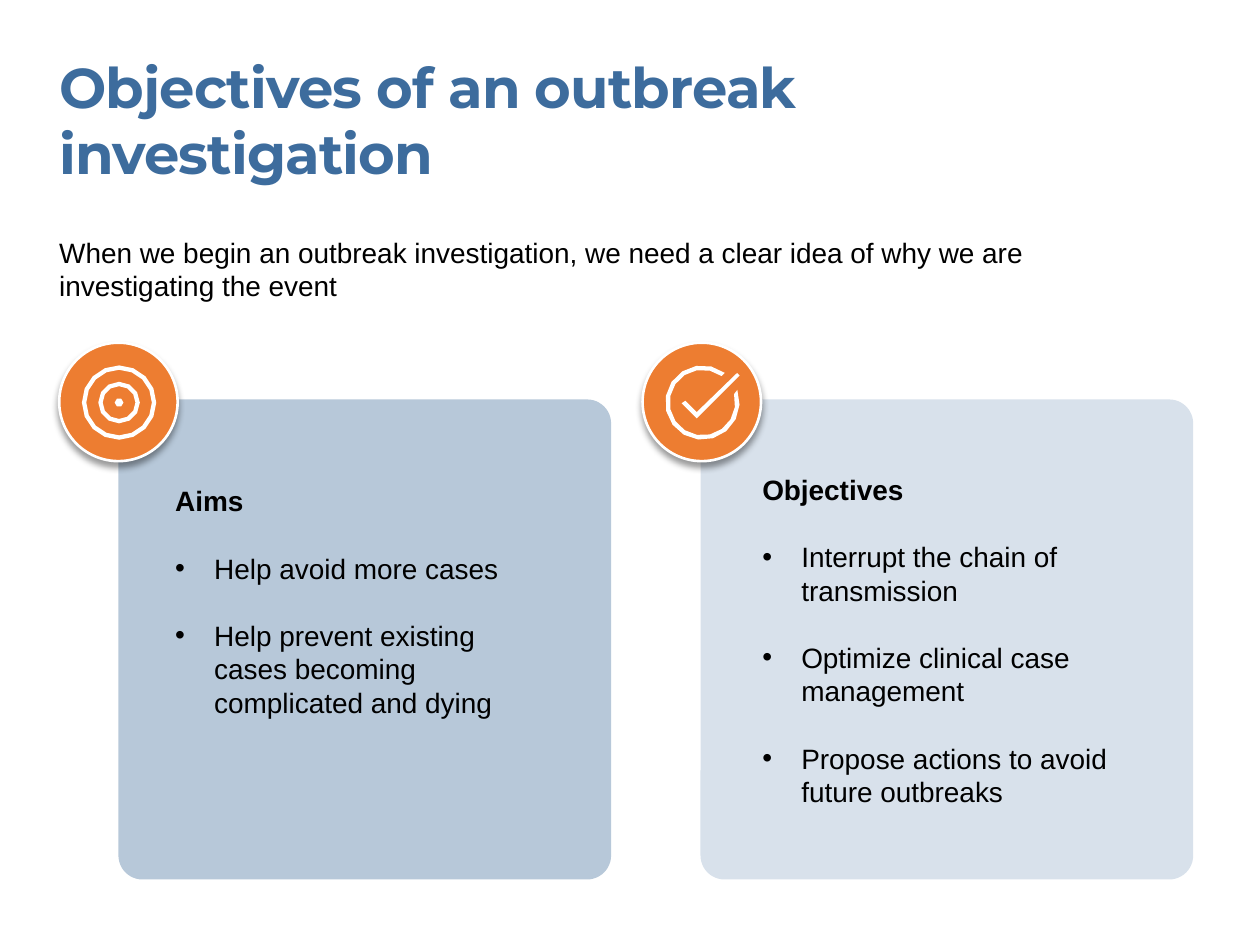
from math import cos, radians, sin

from lxml.etree import SubElement
from pptx import Presentation
from pptx.dml.color import RGBColor
from pptx.enum.shapes import MSO_SHAPE as Shape
from pptx.enum.text import MSO_AUTO_SIZE as AutoSize
from pptx.oxml.ns import qn
from pptx.util import Inches, Pt

COLORS = {"blue": "3D6C9D", "aims": "B7C8D9", "orange": "ED7D31",
          "white": "FFFFFF", "black": "000000"}
BODY = {"name": "Arial", "size": Pt(16), "bold": False}
HEADING = {**BODY, "bold": True}
TITLE = {"name": "Montserrat", "size": Pt(32), "bold": True}
LIST_SPACING = 1.2
HEADER_SPACING = 1.19
BADGE_SIZE = 0.94
BADGE_TOP = 2.72
ICON_INSET = 0.18
ICON_SIZE = 0.59
CARD_TOP = 3.17


def rgb(color):
    return RGBColor.from_string(COLORS[color])


def add_element(parent, tag, **values):
    return SubElement(parent, qn(tag), {key: str(value) for key, value in values.items()})


def paint(shape, color):
    shape.shadow.inherit = False
    shape.fill.solid()
    shape.fill.fore_color.rgb = rgb(color)
    shape.line.fill.background()


def add_box(page, left, top, width, height):
    box = page.shapes.add_textbox(*map(Inches, (left, top, width, height)))
    frame = box.text_frame
    settings = {"word_wrap": True, "auto_size": AutoSize.SHAPE_TO_FIT_TEXT,
                "margin_left": 0, "margin_top": 0, "margin_right": 0, "margin_bottom": 0}
    for name, value in settings.items():
        setattr(frame, name, value)
    return frame


def write(para, text, style, color="black", spacing=LIST_SPACING):
    span = para.add_run()
    span.text = text
    for name, value in style.items():
        setattr(span.font, name, value)
    span.font.color.rgb = rgb(color)
    para.line_spacing = Pt(style["size"].pt * spacing)
    return span


def add_bullet(frame, text):
    """Add a bulleted paragraph, one line below the previous one."""
    para = frame.add_paragraph()
    write(para, text, BODY)
    para.space_before = para.line_spacing
    props = para._p.get_or_add_pPr()
    props.set("marL", str(Inches(0.31)))
    props.set("indent", str(Inches(-0.31)))
    add_element(add_element(props, "a:buClr"), "a:srgbClr", val=COLORS["black"])
    add_element(props, "a:buFont", typeface="Arial")
    add_element(props, "a:buChar", char="•")


def add_list(page, place, heading, items):
    frame = add_box(page, *place)
    write(frame.paragraphs[0], heading, HEADING)
    for item in items:
        add_bullet(frame, item)


def add_card(page, left, color, opacity=100):
    card = page.shapes.add_shape(
        Shape.ROUNDED_RECTANGLE, *map(Inches, (left, CARD_TOP, 3.91, 3.81)))
    card.adjustments[0] = 0.05
    paint(card, color)
    if opacity < 100:
        fill_color = card._element.spPr.find(qn("a:solidFill"))[0]
        add_element(fill_color, "a:alpha", val=opacity * 1000)


def add_badge(page, left):
    badge = page.shapes.add_shape(
        Shape.OVAL, *map(Inches, (left, BADGE_TOP, BADGE_SIZE, BADGE_SIZE)))
    paint(badge, "orange")
    badge.line.color.rgb = rgb("white")
    badge.line.width = Pt(1.5)
    effects = badge._element.spPr.find(qn("a:effectLst"))
    shadow = add_element(effects, "a:outerShdw", blurRad=Pt(4), dist=Pt(3),
                         dir=90 * 60000, algn="ctr", rotWithShape=0)
    shade = add_element(shadow, "a:srgbClr", val=COLORS["black"])
    add_element(shade, "a:alpha", val=40000)


def arc(diameter, steps, start=0, end=360):
    """Points of an arc around the icon's middle, angles in degrees, clockwise."""
    angles = [radians(start + (end - start) * step / steps) for step in range(steps + 1)]
    return [((ICON_SIZE + diameter * cos(angle)) / 2,
             (ICON_SIZE + diameter * sin(angle)) / 2) for angle in angles]


def circle(diameter, steps):
    return arc(diameter, steps)[:-1]


def add_icon(page, badge_left, contours):
    """Draw closed outlines, given from the icon's top left, as one white shape."""
    left, top = badge_left + ICON_INSET, BADGE_TOP + ICON_INSET
    builder = None
    for contour in contours:
        first, *others = [(Inches(left + x), Inches(top + y)) for x, y in contour]
        if builder is None:
            builder = page.shapes.build_freeform(*first)
        else:
            builder.move_to(*first)
        builder.add_line_segments(others, close=True)
    paint(builder.convert_to_shape(), "white")


def add_header(page):
    title = add_box(page, 0.47, 0.42, 8.55, 1.08)
    span = write(title.paragraphs[0], "Objectives of an outbreak investigation",
                 TITLE, "blue", HEADER_SPACING)
    span.font._element.set("spc", "-50")
    intro = add_box(page, 0.47, 1.87, 7.74, 0.54)
    write(intro.paragraphs[0], "When we begin an outbreak investigation, we need a clear "
          "idea of why we are investigating the event", BODY, spacing=HEADER_SPACING)


def main():
    deck = Presentation()
    deck.slide_width, deck.slide_height = Inches(10), Inches(7.5)
    page = deck.slides.add_slide(deck.slide_layouts[6])
    aims_left, objectives_left = 0.47, 5.1

    add_header(page)
    add_card(page, 0.94, "aims")
    add_card(page, 5.56, "blue", opacity=20)
    for left in (aims_left, objectives_left):
        add_badge(page, left)

    add_list(page, (1.39, 3.84, 3.01, 1.88), "Aims", [
        "Help avoid more cases",
        "Help prevent existing cases becoming complicated and dying"])
    add_list(page, (6.05, 3.75, 3.13, 2.69), "Objectives", [
        "Interrupt the chain of transmission",
        "Optimize clinical case management",
        "Propose actions to avoid future outbreaks"])

    open_ring = arc(ICON_SIZE, 14, -20, 307) + arc(0.52, 14, 306, -15)
    check = [(0.25, 0.42), (0.13, 0.3), (0.16, 0.28),
             (0.25, 0.37), (0.57, 0.06), (0.59, 0.08)]
    add_icon(page, objectives_left, [open_ring, check])
    rings = [(ICON_SIZE, 16), (0.52, 16), (0.33, 12), (0.26, 12), (0.07, 6)]
    add_icon(page, aims_left, [circle(*ring) for ring in rings])
    deck.save("out.pptx")


if __name__ == "__main__":
    main()
